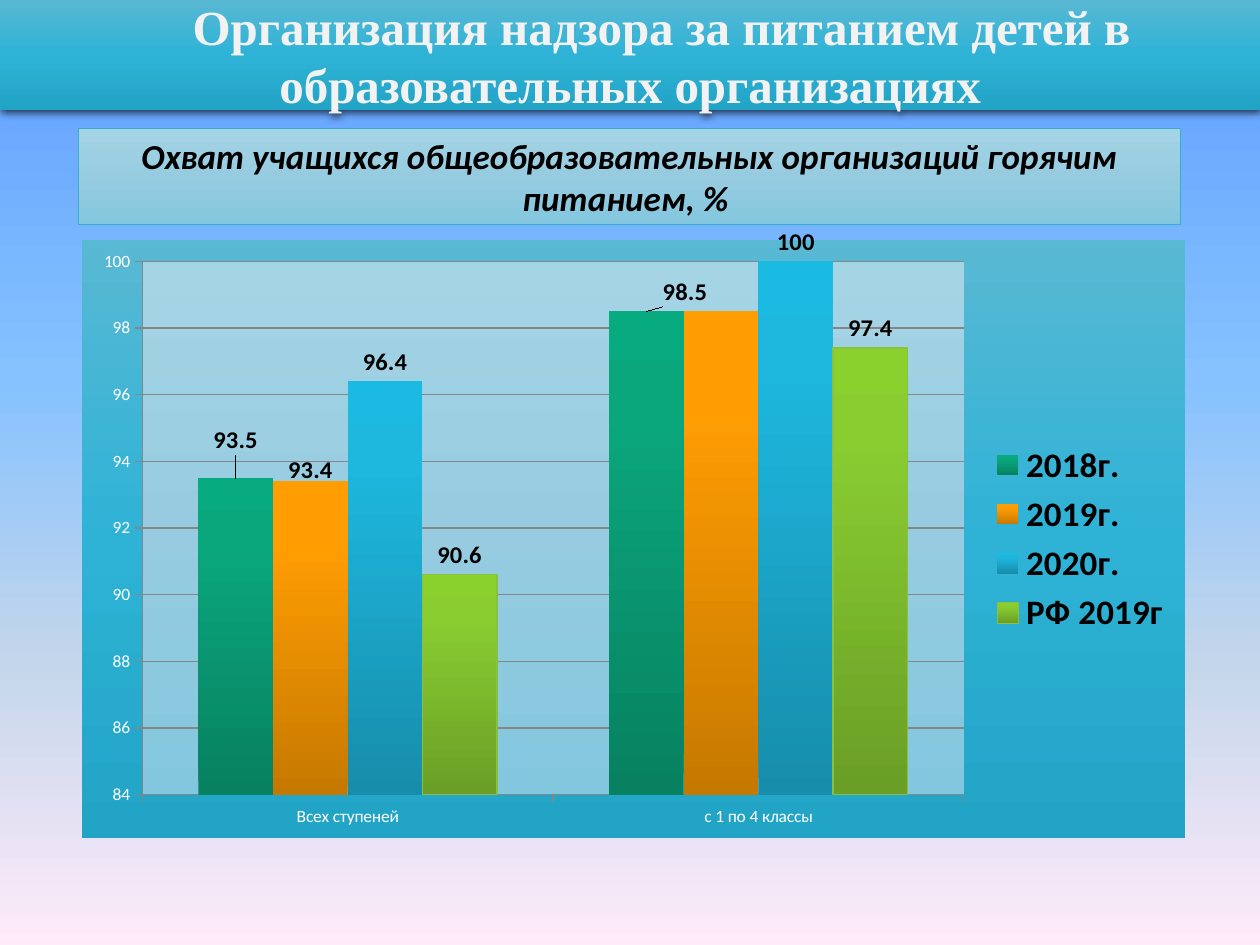
"""Build the slide on school meal coverage with a clustered column chart."""
import pptx
import pptx.chart.data
import pptx.dml.color
import pptx.enum.chart
import pptx.enum.shapes
import pptx.enum.text
import pptx.oxml
import pptx.oxml.ns
import pptx.util

HEADING = "\tОрганизация надзора за питанием детей в образовательных организациях"
SUBTITLE = "Охват учащихся общеобразовательных организаций горячим питанием, % "
CATEGORIES = ["Всех ступеней", "с 1 по 4 классы"]
SERIES = [
    ("2018г.", [93.5, 98.5], "green"),
    ("2019г.", [93.4, 98.5], "orange"),
    ("2020г.", [96.4, 100], "blue"),
    ("РФ 2019г", [90.6, 97.4], "lime"),
]
LABEL_SHIFTS = [(0, 0, 0, -0.03), (0, 1, 0.035, 0), (1, 0, 0, 0.015)]
HIDDEN_LABEL = (1, 1)

COLOURS = {"black": "000000", "white": "FFFFFF", "heading": "F2F2F2",
           "border": "36AFCE", "lime border": "88C040", "grid": "868686"}
GRADIENTS = {
    "sky": (90, [(0, "5E9EFF"), (40, "85C2FF"), (70, "C4D6EB"), (100, "FFEBFA")]),
    "teal": (90, [(0, "59B8D4"), (50, "2EB3D6"), (100, "21A4C6")]),
    "pale": (90, [(0, "A5D4E5"), (50, "97CCE0"), (100, "83C7DF")]),
    "green": (270, [(0, "088160"), (80, "0AA77D"), (100, "07AB7F")]),
    "orange": (270, [(0, "C67900"), (80, "FF9D03"), (100, "FF9D04")]),
    "blue": (270, [(0, "178DAB"), (80, "1EB7DE"), (100, "1BBAE2")]),
    "lime": (270, [(0, "6A9E26"), (80, "89CD31"), (100, "8AD12E")]),
}
BOXES = {"slide": (0, 0, 1260, 945), "heading": (0, 0, 1260, 110),
         "subtitle": (78, 128, 1103, 97), "chart": (82, 227, 1103, 611)}
PX = 914400 / 126
qn = pptx.oxml.ns.qn


def box(name):
    return [pptx.util.Emu(round(length * PX)) for length in BOXES[name]]


def rgb(name):
    return pptx.dml.color.RGBColor.from_string(COLOURS[name])


def xml(markup):
    tag, rest = markup[1:].split(">", 1)
    names = pptx.oxml.ns.nsdecls("a", "c")
    return pptx.oxml.parse_xml(f"<{tag} {names}>{rest}")


def gradient(name):
    angle, stops = GRADIENTS[name]
    marks = "".join(f'<a:gs pos="{pos * 1000}"><a:srgbClr val="{colour}"/></a:gs>'
                    for pos, colour in stops)
    return xml(f"<a:gradFill><a:gsLst>{marks}</a:gsLst>"
               f'<a:lin ang="{angle * 60000}" scaled="0"/></a:gradFill>')


def paint(fill, owner, name):
    fill.solid()
    solid = next(owner.iter(qn("a:solidFill")))
    solid.getparent().replace(solid, gradient(name))


def area_fill(name):
    area = xml("<c:spPr></c:spPr>")
    area.append(gradient(name))
    area.append(xml("<a:ln><a:noFill/></a:ln>"))
    return area


def style(font, size, colour, bold=False, italic=False, face="Calibri"):
    font.size = pptx.util.Pt(size)
    font.color.rgb = rgb(colour)
    font.bold = bold
    font.italic = italic
    font.name = face


def write(shape, text, **look):
    frame = shape.text_frame
    frame.text = text
    frame.word_wrap = True
    frame.auto_size = pptx.enum.text.MSO_AUTO_SIZE.NONE
    frame.vertical_anchor = pptx.enum.text.MSO_ANCHOR.MIDDLE
    frame.paragraphs[0].alignment = pptx.enum.text.PP_ALIGN.CENTER
    style(frame.paragraphs[0].runs[0].font, **look)


def add_heading(slide):
    heading = slide.shapes.title
    heading.left, heading.top, heading.width, heading.height = box("heading")
    properties = heading._element.spPr
    paint(heading.fill, properties, "teal")
    properties.append(xml(
        '<a:effectLst><a:outerShdw blurRad="57150" dist="19050" dir="5400000" '
        'algn="ctr" rotWithShape="0"><a:srgbClr val="000000">'
        '<a:alpha val="63000"/></a:srgbClr></a:outerShdw></a:effectLst>'))
    write(heading, HEADING, size=28, colour="heading", bold=True,
          face="Times New Roman")


def add_subtitle(slide):
    subtitle = slide.shapes.add_shape(
        pptx.enum.shapes.MSO_SHAPE.RECTANGLE, *box("subtitle"))
    subtitle.shadow.inherit = False
    paint(subtitle.fill, subtitle._element.spPr, "pale")
    subtitle.line.color.rgb = rgb("border")
    subtitle.line.width = pptx.util.Pt(0.5)
    write(subtitle, SUBTITLE, size=20, colour="black", bold=True, italic=True)


def format_axes(chart):
    values = chart.value_axis
    values.minimum_scale, values.maximum_scale = 84, 100
    values.has_major_gridlines = True
    values.tick_labels.number_format = "General"
    values.tick_labels.number_format_is_linked = False
    lines = [values.major_gridlines.format.line]
    for axis in (values, chart.category_axis):
        axis.major_tick_mark = pptx.enum.chart.XL_TICK_MARK.OUTSIDE
        lines.append(axis.format.line)
    for line in lines:
        line.color.rgb = rgb("grid")
        line.width = pptx.util.Pt(0.75)


def point_label(series, index):
    label = series.points[index].data_label
    style(label.font, 14, "black", bold=True)
    label.position = pptx.enum.chart.XL_LABEL_POSITION.OUTSIDE_END
    return series._element.find(f".//{qn('c:dLbl')}[{qn('c:idx')}][last()]") \
        if index else series._element.find(f".//{qn('c:dLbl')}")


def format_series(plot):
    for series, (_, _, colour) in zip(plot.series, SERIES):
        paint(series.format.fill, series._element.get_or_add_spPr(), colour)
        series.invert_if_negative = False
        labels = series.data_labels
        labels.show_value = True
        labels.position = pptx.enum.chart.XL_LABEL_POSITION.OUTSIDE_END
        style(labels.font, 14, "black", bold=True)
    border = plot.series[-1].format.line
    border.color.rgb = rgb("lime border")
    border.width = pptx.util.Pt(0.75)
    for number, index, x, y in LABEL_SHIFTS:
        label = point_label(plot.series[number], index)
        label.find(qn("c:idx")).addnext(xml(
            f'<c:layout><c:manualLayout><c:x val="{x}"/><c:y val="{y}"/>'
            "</c:manualLayout></c:layout>"))
    number, index = HIDDEN_LABEL
    hidden = point_label(plot.series[number], index)
    for part in list(hidden)[1:]:
        hidden.remove(part)
    hidden.append(xml('<c:delete val="1"></c:delete>'.replace("<c:delete val", "<c:delete val")))


def add_coverage_chart(slide):
    data = pptx.chart.data.CategoryChartData()
    data.categories = CATEGORIES
    for name, values, _ in SERIES:
        data.add_series(name, values)
    chart = slide.shapes.add_chart(
        pptx.enum.chart.XL_CHART_TYPE.COLUMN_CLUSTERED, *box("chart"), data).chart
    chart.has_title = False
    style(chart.font, 10, "white")
    chart.has_legend = True
    chart.legend.position = pptx.enum.chart.XL_LEGEND_POSITION.RIGHT
    chart.legend.include_in_layout = False
    style(chart.legend.font, 20, "black", bold=True)
    plot = chart.plots[0]
    plot.gap_width = 150
    plot.vary_by_categories = False
    format_axes(chart)
    format_series(plot)
    space = chart._chartSpace
    space.find(qn("c:txPr")).addprevious(area_fill("teal"))
    space.find(f".//{qn('c:plotArea')}").append(area_fill("pale"))


def main():
    deck = pptx.Presentation()
    deck.slide_width, deck.slide_height = box("slide")[2:]
    slide = deck.slides.add_slide(deck.slide_layouts[5])
    paint(slide.background.fill, slide._element, "sky")
    add_heading(slide)
    add_subtitle(slide)
    add_coverage_chart(slide)
    deck.save("out.pptx")


if __name__ == "__main__":
    main()
